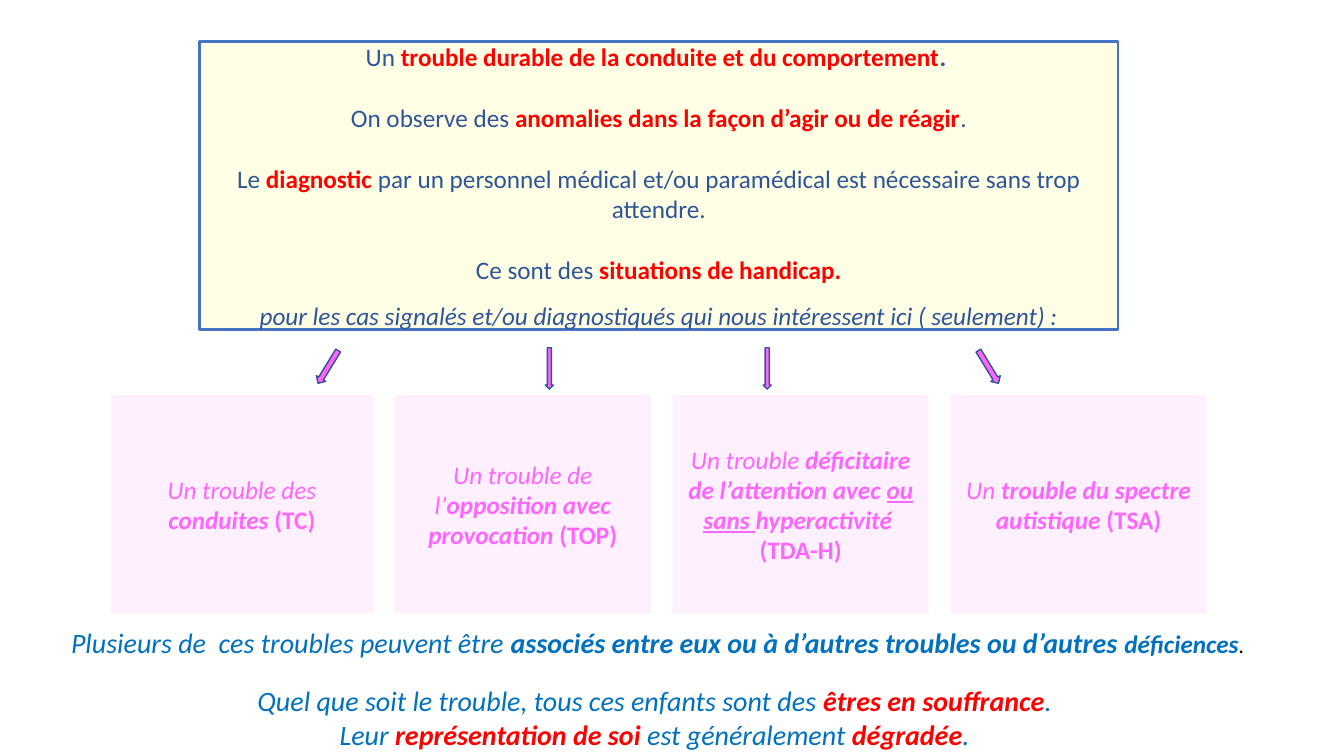
from lxml import etree
from pptx import Presentation
from pptx.dml.color import RGBColor
from pptx.enum.shapes import MSO_SHAPE
from pptx.enum.text import MSO_ANCHOR, PP_ALIGN
from pptx.oxml.ns import qn
from pptx.util import Pt

RECTANGLE = MSO_SHAPE.RECTANGLE
DOWN_ARROW = MSO_SHAPE.DOWN_ARROW
MIDDLE = MSO_ANCHOR.MIDDLE
TOP = MSO_ANCHOR.TOP
CENTER = PP_ALIGN.CENTER

FONT = "Calibri"
NAVY = "2F5597"
RED = "FF0000"
PINK = "FF66FF"
BLUE = "0070C0"
BLACK = "000000"

KEY = {"color": RED, "bold": True}
BOLD = {"bold": True}
UPRIGHT = {"bold": True, "italic": False}
UNDERLINED = {"bold": True, "underline": True}

DEFINITION = [
    (0, [("Un ", {}), ("trouble durable de la conduite et du comportement", KEY), (". ", BOLD)]),
    (22, [("On observe des ", {}), ("anomalies dans la façon d’agir ou de réagir", KEY), (".", {})]),
    (22, [("Le ", {}), ("diagnostic ", KEY),
          ("par un personnel médical et/ou paramédical est nécessaire sans trop attendre.", {})]),
    (22, [("Ce sont des ", {}), ("situations de handicap.", KEY)]),
    (11, [("pour les cas signalés et/ou diagnostiqués qui nous intéressent ici ( seulement) :",
           {"italic": True})]),
]

CARD_TOP, CARD_HEIGHT, CARD_GAP = 282.2, 156.2, 15.6
CARDS = [
    (187.2, [(0, [("Un trouble des ", {}), ("conduites ", BOLD), ("(TC)", UPRIGHT)])]),
    (182.9, [(0, [("Un trouble de l’", {}), ("opposition avec provocation ", BOLD),
                  ("(TOP)", UPRIGHT)])]),
    (182.9, [(0, [("Un trouble ", {}), ("déficitaire de l’attention avec ", BOLD),
                  ("ou sans", UNDERLINED), (" ", {"underline": True}),
                  ("hyperactivité ", BOLD)]),
             (0, [("(TDA-H)", UPRIGHT)])]),
    (182.9, [(0, [("Un ", {}), ("trouble du spectre autistique ", BOLD), ("(TSA)", UPRIGHT)])]),
]

ARROW_AXIS, ARROW_TOP = 470.2, 248.4
ARROWS = [
    (-235.8, 7.9, 27.4, 31.5),
    (-77.8, 5.8, 29.5, 0),
    (77.8, 5.8, 29.5, 0),
    (235.8, 7.9, 27.4, -31.5),
]

ASSOCIATION = [
    (0, [("Plusieurs de  ces troubles peuvent être ", {}),
         ("associés entre eux ou à d’autres troubles ou d’autres ", BOLD),
         ("déficiences", {"bold": True, "size": 18}),
         (".", {"size": 16, "color": BLACK})]),
]
CONCLUSION = [
    (0, [("Quel que soit le trouble, tous ces enfants sont des ", {}),
         ("êtres en souffrance", KEY), (". ", {})]),
    (0, [("Leur ", {}), ("représentation de soi ", KEY), ("est généralement ", {}),
         ("dégradée", KEY), (". ", {})]),
]


def rgb(value):
    return RGBColor.from_string(value)


def add_span(para, text, size=18, color=NAVY, bold=False, italic=False, underline=False):
    span = para.add_run()
    span.text = text
    font = span.font
    font.name = FONT
    font.size = Pt(size)
    font.color.rgb = rgb(color)
    font.bold = bold
    font.italic = italic
    font.underline = underline


def write(box, paragraphs, anchor=MIDDLE, **base):
    frame = box.text_frame
    frame.word_wrap = True
    frame.vertical_anchor = anchor
    for index, (space, spans) in enumerate(paragraphs):
        para = frame.add_paragraph() if index else frame.paragraphs[0]
        para.alignment = CENTER
        para.space_before = Pt(space)
        for text, style in spans:
            add_span(para, text, **{**base, **style})


def add_shape(page, kind, left, top, width, height, fill, opacity=100, line=None, weight=1):
    shape = page.shapes.add_shape(kind, Pt(left), Pt(top), Pt(width), Pt(height))
    shape.shadow.inherit = False
    shape.fill.solid()
    shape.fill.fore_color.rgb = rgb(fill)
    if opacity < 100:
        color = shape.fill._xPr.find(qn("a:solidFill"))[0]
        etree.SubElement(color, qn("a:alpha")).set("val", str(opacity * 1000))
    if line:
        shape.line.color.rgb = rgb(line)
        shape.line.width = Pt(weight)
    else:
        shape.line.fill.background()
    return shape


def add_note(page, top, height, paragraphs):
    box = page.shapes.add_textbox(Pt(4.3), Pt(top), Pt(931), Pt(height))
    write(box, paragraphs, anchor=TOP, size=20, color=BLUE, italic=True)


def add_cards(page):
    left = 79.2
    for width, paragraphs in CARDS:
        card = add_shape(page, RECTANGLE, left, CARD_TOP, width, CARD_HEIGHT, "FFCCFF", opacity=28)
        write(card, paragraphs, color=PINK, italic=True)
        left += width + CARD_GAP


def add_arrows(page):
    for offset, width, height, angle in ARROWS:
        arrow = add_shape(page, DOWN_ARROW, ARROW_AXIS + offset - width / 2, ARROW_TOP,
                          width, height, PINK, line="325491")
        arrow.rotation = angle


def main():
    deck = Presentation()
    deck.slide_width = Pt(960)
    deck.slide_height = Pt(540)
    page = deck.slides.add_slide(deck.slide_layouts[6])
    add_note(page, 443.5, 51, ASSOCIATION)
    definition = add_shape(page, RECTANGLE, 142.6, 29.5, 656, 206, "FFFFCC",
                           opacity=49, line="4472C4", weight=2)
    write(definition, DEFINITION)
    add_cards(page)
    add_arrows(page)
    add_note(page, 484.6, 75, CONCLUSION)
    deck.save("out.pptx")


if __name__ == "__main__":
    main()
